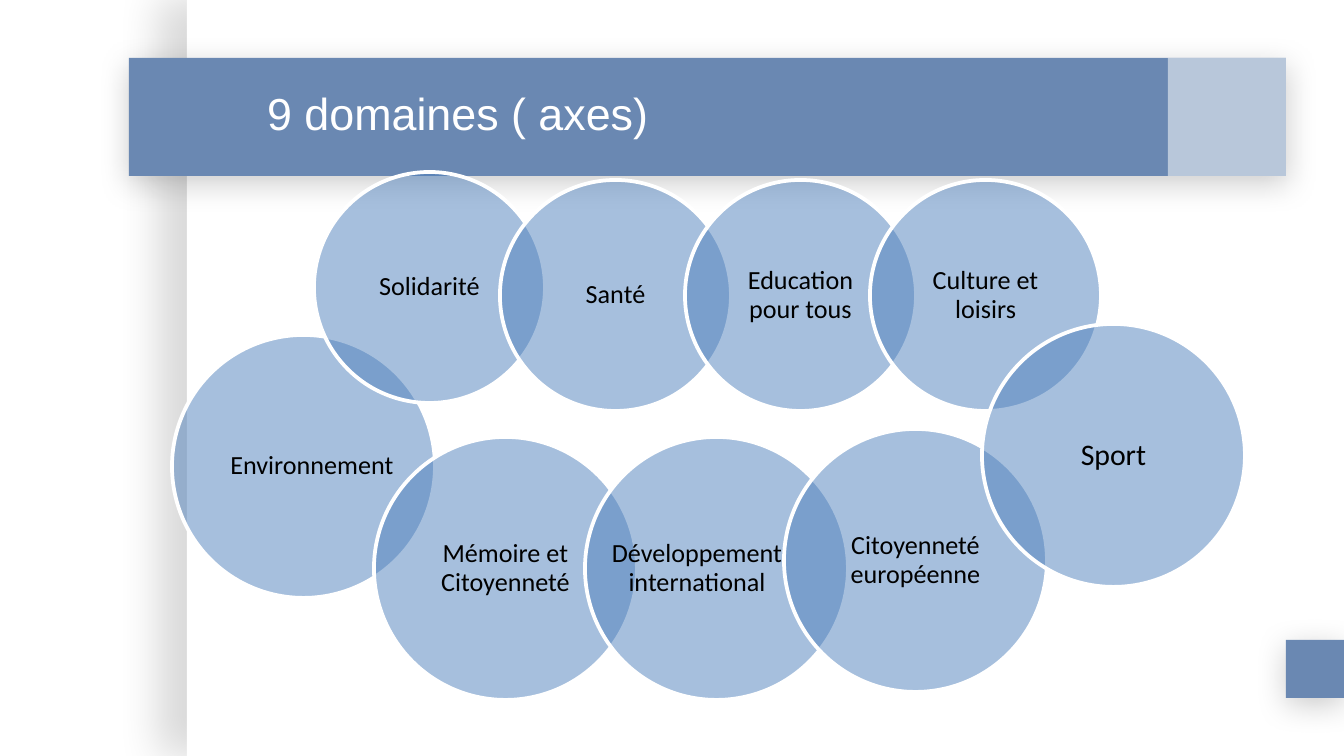
from lxml import etree
from pptx import Presentation
from pptx import util as u
from pptx.dml.color import RGBColor
from pptx.enum import shapes, text
from pptx.oxml.ns import qn

PX = 914400 / 134.4
WHITE = RGBColor(0xFF, 0xFF, 0xFF)
BLACK = RGBColor(0, 0, 0)
SLATE = RGBColor(0x6A, 0x88, 0xB2)
BLUE = RGBColor(0x4F, 0x81, 0xBD)

TITLE = "9 domaines ( axes)"
LARGE, SMALL = 263, 231  # circle diameters
SIDE_INSET = {LARGE: 15, SMALL: 12}

# label, left, top, diameter, text size, (label left offset, label width) if wider
DOMAINS = [
    ("Environnement", 172, 335, LARGE, 14, (39, 202)),
    ("Mémoire et Citoyenneté", 374, 437, LARGE, 14, None),
    ("Développement international", 585, 437, LARGE, 14, (0, 224)),
    ("Citoyenneté européenne", 784, 429, LARGE, 14, None),
    ("Solidarité", 314, 172, SMALL, 14, None),
    ("Santé", 500, 180, SMALL, 14, None),
    ("Education pour tous", 685, 180, SMALL, 14, None),
    ("Culture et loisirs", 870, 180, SMALL, 14, None),
    ("Sport", 982, 324, LARGE, 16, None),
]

# left, top, width, height, fill, opacity %, shadow (opacity %, blur pt, distance pt, degrees)
BAR_SHADOW = (20, 16.9, 3.8, 90)
PANELS = [
    (187, 0, 1157, 756, WHITE, 100, (15, 22.5, 15, 180)),
    (1286, 640, 58, 58, SLATE, 100, BAR_SHADOW),
    (129, 58, 1157, 118, SLATE, 100, BAR_SHADOW),
    (1168, 58, 118, 118, WHITE, 53, None),
]


def px(*lengths):
    return [u.Emu(round(n * PX)) for n in lengths]


def set_opacity(color_parent, percent):
    color = color_parent.find(".//" + qn("a:srgbClr"))
    etree.SubElement(color, qn("a:alpha"), val=str(percent * 1000))


def add_filled(parent, kind, box, color, opacity):
    shape = parent.add_shape(kind, *px(*box))
    shape.shadow.inherit = False
    shape.fill.solid()
    shape.fill.fore_color.rgb = color
    shape.line.fill.background()
    if opacity < 100:
        set_opacity(shape._element.spPr.find(qn("a:solidFill")), opacity)
    return shape


def add_shadow(shape, opacity, blur, distance, degrees):
    effects = shape._element.spPr.find(qn("a:effectLst"))
    shadow = etree.SubElement(
        effects, qn("a:outerShdw"), blurRad=str(u.Pt(blur)), dist=str(u.Pt(distance)),
        dir=str(degrees * 60000), algn="ctr", rotWithShape="0")
    etree.SubElement(shadow, qn("a:srgbClr"), val=str(BLACK))
    set_opacity(shadow, opacity)


def add_text(parent, box, words, size, font, color):
    textbox = parent.add_textbox(*px(*box))
    frame = textbox.text_frame
    frame.word_wrap = True
    run = frame.paragraphs[0].add_run()
    run.text = words
    run.font.size = u.Pt(size)
    run.font.name = font
    run.font.color.rgb = color
    return frame


def add_domain(slide, label, left, top, diameter, size, wide):
    """Group a translucent circle with its label, set in the circle's inscribed square."""
    group = slide.shapes.add_group_shape().shapes
    circle = add_filled(group, shapes.MSO_SHAPE.OVAL, (left, top, diameter, diameter), BLUE, 50)
    circle.line.color.rgb = WHITE
    circle.line.width = u.Pt(2)

    margin = round(diameter * 0.147)
    side = diameter - 2 * margin
    offset, width = wide or (margin, side)
    frame = add_text(group, (left + offset, top + margin, width, side),
                     label, size, "Calibri", BLACK)
    frame.vertical_anchor = text.MSO_ANCHOR.MIDDLE
    frame.margin_left, frame.margin_right = px(SIDE_INSET[diameter]) * 2
    frame.margin_top, frame.margin_bottom = px(4) * 2
    frame.paragraphs[0].alignment = text.PP_ALIGN.CENTER
    frame.paragraphs[0].line_spacing = 0.9


def main():
    deck = Presentation()
    deck.slide_width, deck.slide_height = px(1344, 756)
    slide = deck.slides.add_slide(deck.slide_layouts[6])

    for *box, color, opacity, shadow in PANELS:
        panel = add_filled(slide.shapes, shapes.MSO_SHAPE.RECTANGLE, box, color, opacity)
        if shadow:
            add_shadow(panel, *shadow)

    title = add_text(slide.shapes, (254, 79, 688, 67), TITLE, 24, "Arial", WHITE)
    title.auto_size = text.MSO_AUTO_SIZE.SHAPE_TO_FIT_TEXT

    for domain in DOMAINS:
        add_domain(slide, *domain)

    deck.save("out.pptx")


if __name__ == "__main__":
    main()
